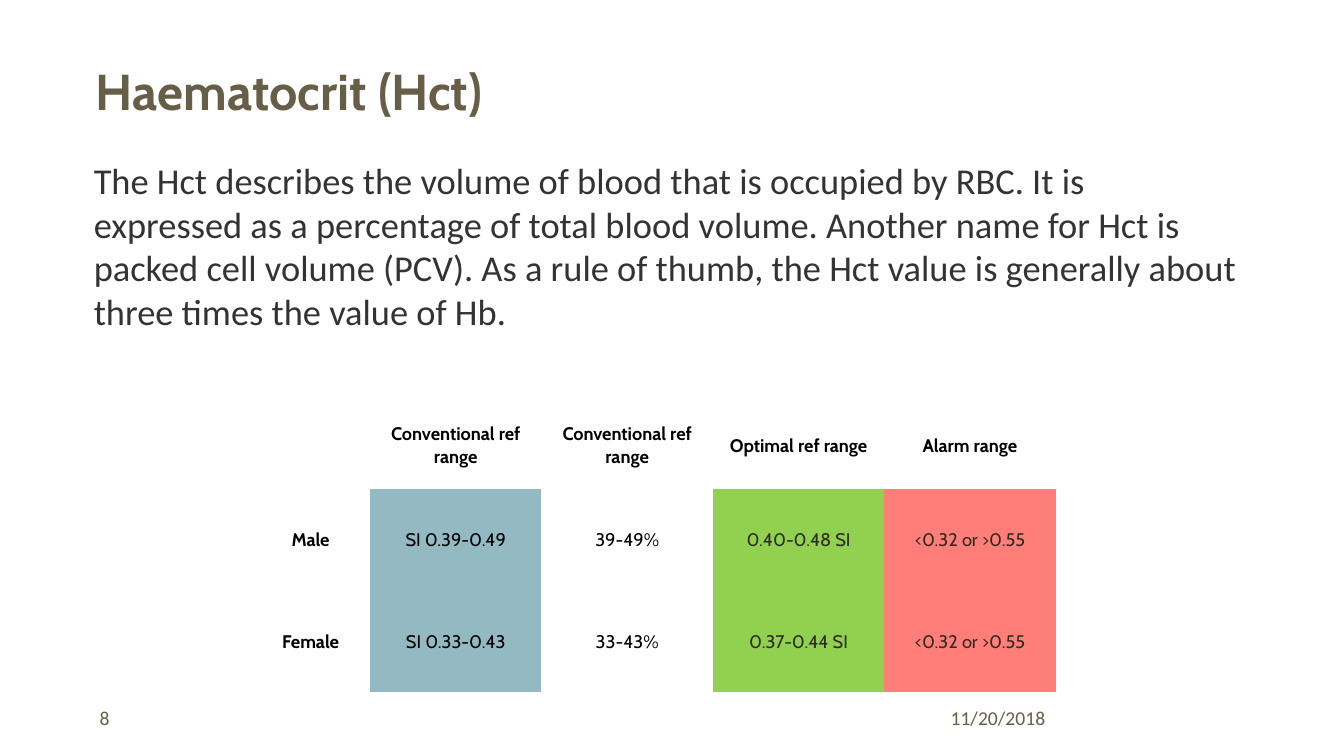
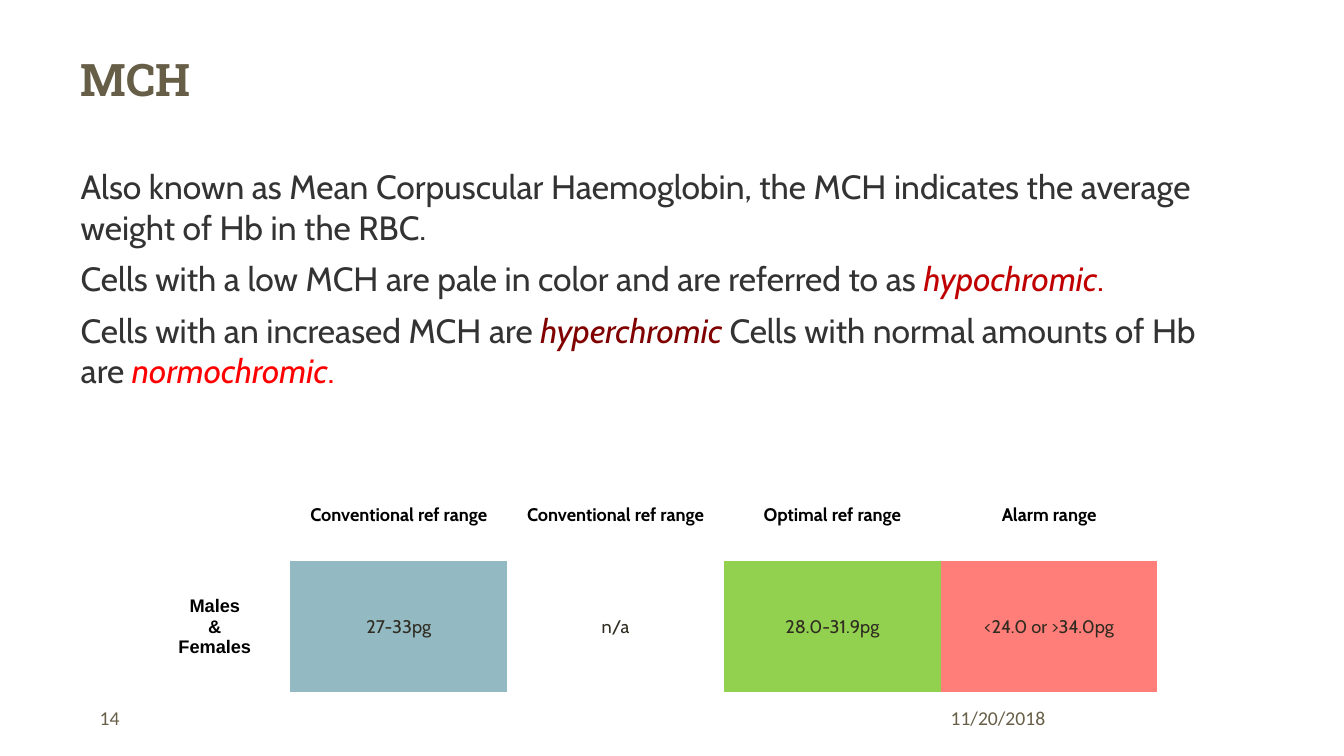
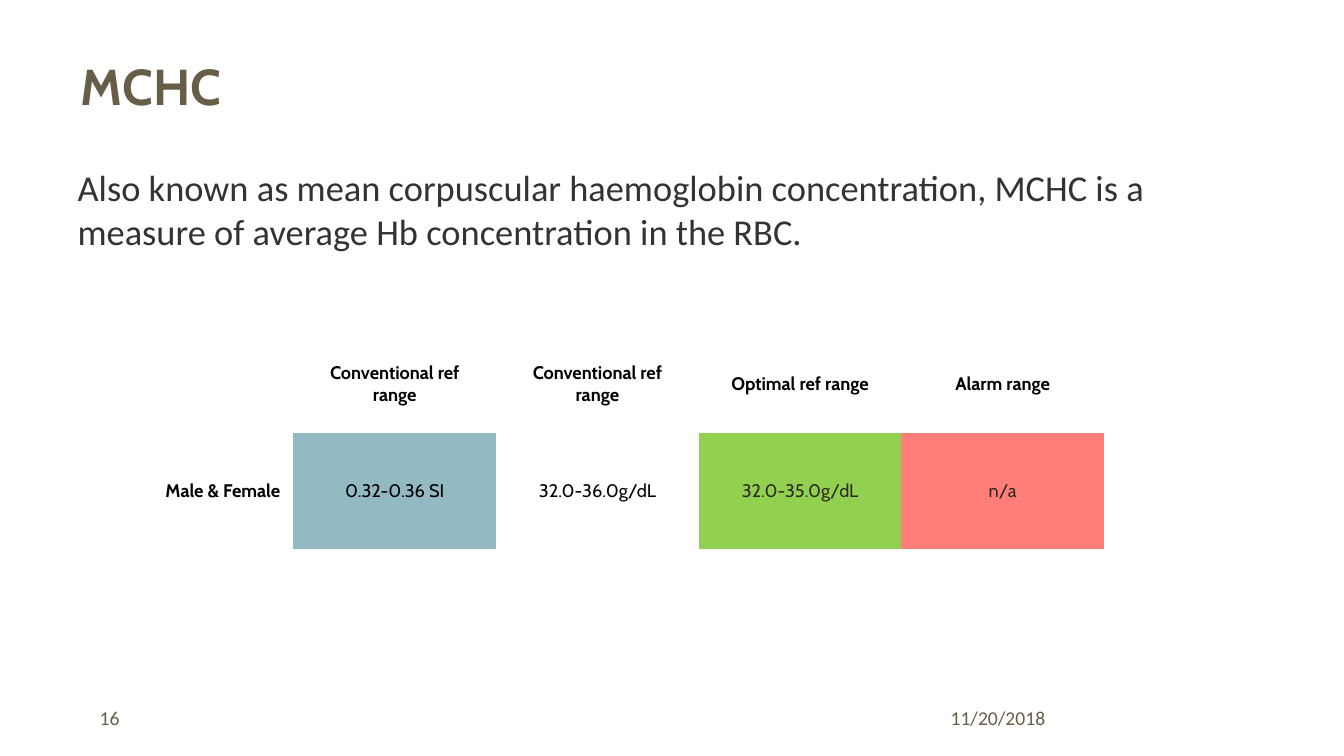
"""Builds three slides of blood count reference ranges."""
from pptx import Presentation
from pptx import util as u
from pptx.dml import color
from pptx.enum import text
from pptx.oxml import ns
from lxml import etree

EMU_PER_PX = 9144
COLOURS = {
    "white": "FFFFFF", "heading": "675E47", "body": "333333", "black": "000000",
    "ink": "2F2B20", "blue": "93B9C3", "green": "92D050", "red": "FF7E79",
    "hypo": "C00000", "hyper": "800000", "normo": "FF0000",
}
HEADERS = ["", "Conventional ref range", "Conventional ref range",
           "Optimal ref range", "Alarm range"]
COLUMN_FILLS = [None, "blue", None, "green", "red"]
MIXED_INKS = ["black", "black", "ink", "ink"]
DATE = "11/20/2018"
NO_STYLE_NO_GRID = "{2D5ABB26-0587-4C30-8999-92F81FD0307C}"


def px(length):
    """Turn whole px into EMU."""
    return u.Emu(length * EMU_PER_PX)


def rgb(name):
    """Look up a named colour."""
    return color.RGBColor.from_string(COLOURS[name])


def place(shape, left, top, width, height):
    """Move and size a shape."""
    shape.left, shape.top, shape.width, shape.height = map(px, (left, top, width, height))


def set_margins(target, horizontal=13, vertical=13):
    """Set the insets of a text frame or a table cell."""
    target.margin_left = target.margin_right = px(horizontal)
    target.margin_top = target.margin_bottom = px(vertical)


def write_text(frame, paragraphs, align=text.PP_ALIGN.LEFT, before=0, after=0,
               spacing=1.0, **run_format):
    """Fill a frame with paragraphs, each a string or a list of (text, overrides)."""
    for index, content in enumerate(paragraphs):
        paragraph = frame.paragraphs[0] if index == 0 else frame.add_paragraph()
        paragraph.alignment = align
        paragraph.space_before, paragraph.space_after = u.Pt(before), u.Pt(after)
        paragraph.line_spacing = spacing
        runs = [(content, {})] if isinstance(content, str) else content
        for words, overrides in runs:
            style = {"bold": False, "italic": False, **run_format, **overrides}
            run = paragraph.add_run()
            run.text = words
            run.font.size, run.font.name = u.Pt(style["size"]), style["font"]
            run.font.bold, run.font.italic = style["bold"], style["italic"]
            run.font.color.rgb = rgb(style["colour"])


def fill_placeholder(shape, box, paragraphs, **text_format):
    """Move a placeholder and write unbulleted text in it."""
    place(shape, *box)
    frame = shape.text_frame
    frame.word_wrap = True
    frame.auto_size = text.MSO_AUTO_SIZE.NONE
    frame.vertical_anchor = text.MSO_ANCHOR.TOP
    set_margins(frame)
    write_text(frame, paragraphs, **text_format)
    for paragraph in frame.paragraphs:
        properties = paragraph._p.get_or_add_pPr()
        properties.set("marL", "0")
        properties.set("indent", "0")
        etree.SubElement(properties, ns.qn("a:buNone"))


def add_footer_text(slide, left, width, words):
    """Add one text box of the footer line."""
    box = slide.shapes.add_textbox(px(left), px(695), px(width), px(40))
    box.text_frame.word_wrap = True
    set_margins(box.text_frame, 10, 5)
    write_text(box.text_frame, [words], size=14, font="Calibri", colour="heading")


def add_slide(presentation, number, title, title_box, body, body_box,
              title_size=36, title_font="Cabin", body_size=26, body_font="Calibri"):
    """Add a slide with its title, body and footer."""
    slide = presentation.slides.add_slide(presentation.slide_layouts[1])
    heading, content = slide.placeholders
    fill_placeholder(heading, title_box, [title], size=title_size, font=title_font,
                     colour="heading", bold=True, spacing=1.25, after=8)
    fill_placeholder(content, body_box, body, size=body_size, font=body_font,
                     colour="body", before=8)
    add_footer_text(slide, 89, 289, number)
    add_footer_text(slide, 933, 334, DATE)
    return slide


def add_range_table(slide, left, top, label_width, value_width, heights, rows,
                    inks, label_font="Cabin"):
    """Add a table of reference ranges, one coloured column per kind of range."""
    widths = [label_width] + [value_width] * 4
    frame = slide.shapes.add_table(len(heights), len(widths), px(left), px(top),
                                   px(sum(widths)), px(sum(heights)))
    table = frame.table
    table.first_row = table.horz_banding = False
    table._tbl.tblPr.find(ns.qn("a:tableStyleId")).text = NO_STYLE_NO_GRID
    for column, width in zip(table.columns, widths):
        column.width = px(width)
    for row, height in zip(table.rows, heights):
        row.height = px(height)
    for row_index, values in enumerate([HEADERS] + rows):
        for column_index, value in enumerate(values):
            cell = table.cell(row_index, column_index)
            set_margins(cell)
            cell.vertical_anchor = text.MSO_ANCHOR.MIDDLE
            is_label = row_index == 0 or column_index == 0
            fill = COLUMN_FILLS[column_index] if row_index else None
            if fill:
                cell.fill.solid()
                cell.fill.fore_color.rgb = rgb(fill)
            else:
                cell.fill.background()
            if value:
                write_text(cell.text_frame, value.split("\n"),
                           align=text.PP_ALIGN.CENTER, size=13, bold=is_label,
                           font="Cabin" if column_index else label_font,
                           colour="black" if is_label else inks[column_index - 1])


def add_haematocrit(presentation):
    """Add the haematocrit slide."""
    slide = add_slide(
        presentation, "8", "Haematocrit (Hct)", (82, 32, 1200, 100),
        ["The Hct describes the volume of blood that is occupied by RBC. It is expressed "
         "as a percentage of total blood volume. Another name for Hct is packed cell "
         "volume (PCV). As a rule of thumb, the Hct value is generally about three times "
         "the value of Hb."], (80, 144, 1162, 212))
    add_range_table(
        slide, 249, 399, 118, 170, [86, 101, 101],
        [["Male", "SI 0.39-0.49", "39-49%", "0.40-0.48 SI", "<0.32 or >0.55"],
         ["Female", "SI 0.33-0.43", "33-43%", "0.37-0.44 SI", "<0.32 or >0.55"]],
        MIXED_INKS)


def add_mch(presentation):
    """Add the MCH slide."""
    slide = add_slide(
        presentation, "14", "MCH", (67, 25, 1200, 100),
        ["Also known as Mean Corpuscular Haemoglobin, the MCH indicates the average "
         "weight of Hb in the RBC.",
         [("Cells with a low MCH are pale in color and are referred to as ", {}),
          ("hypochromic", {"colour": "hypo", "italic": True}),
          (".", {"colour": "hypo"})],
         [("Cells with an increased MCH are ", {}),
          ("hyperchromic ", {"colour": "hyper", "italic": True}),
          ("Cells with normal amounts of Hb are ", {}),
          ("normochromic", {"colour": "normo", "italic": True}),
          (".", {"colour": "normo"})]],
        (67, 152, 1168, 353), title_size=32, title_font="Roboto Slab",
        body_size=24, body_font="Cabin")
    add_range_table(
        slide, 138, 465, 150, 215, [92, 130],
        [["Males\n&\nFemales", "27-33pg", "n/a", "28.0-31.9pg", "<24.0 or >34.0pg"]],
        ["ink"] * 4, label_font="Arial")


def add_mchc(presentation):
    """Add the MCHC slide."""
    slide = add_slide(
        presentation, "16", "MCHC", (67, 27, 527, 100),
        ["Also known as mean corpuscular haemoglobin concentration, MCHC is a measure "
         "of average Hb concentration in the RBC."], (64, 151, 1147, 137))
    add_range_table(
        slide, 151, 332, 140, 201, [98, 115],
        [["Male & Female", "0.32-0.36 SI", "32.0-36.0g/dL", "32.0-35.0g/dL", "n/a"]],
        MIXED_INKS)


def main():
    """Build and save the presentation."""
    presentation = Presentation()
    presentation.slide_width, presentation.slide_height = px(1333), px(750)
    background = presentation.slide_master.background.fill
    background.solid()
    background.fore_color.rgb = rgb("white")
    add_haematocrit(presentation)
    add_mch(presentation)
    add_mchc(presentation)
    presentation.save("out.pptx")


if __name__ == "__main__":
    main()
